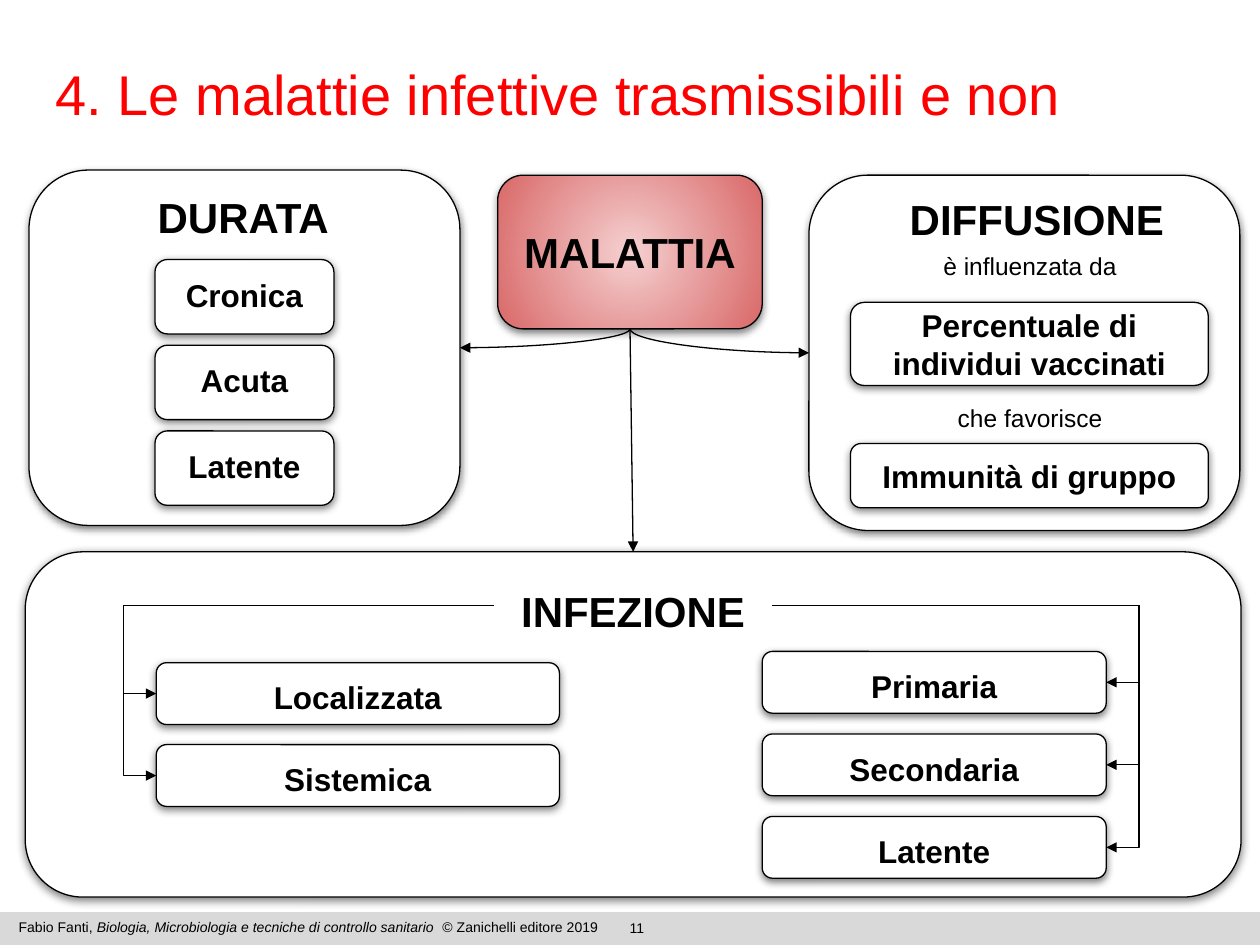
from lxml import etree
from pptx import Presentation
from pptx.dml.color import RGBColor
from pptx.enum.shapes import MSO_CONNECTOR as LINK, MSO_SHAPE as SHAPE
from pptx.enum.text import MSO_ANCHOR as ANCHOR, MSO_AUTO_SIZE as FIT, PP_ALIGN as ALIGN
from pptx.oxml.ns import qn
from pptx.util import Inches, Pt

THEME = {
    "font": "Arial", "ink": "000000", "paper": "FFFFFF", "title": "FF0000", "footer": "D9D9D9",
    "glow": ("F5D0D0", "D96868"), "line": 0.75,
    "size": {"title": 32, "heading": 24, "box": 18, "note": 14, "footer": 8},
}

TITLE = "4. Le malattie infettive trasmissibili e non"
CENTRE = ("MALATTIA", (3.95, 1.39, 2.1, 1.22))
FOOTER = [("Fabio Fanti, ", False),
          ("Biologia, Microbiologia e tecniche di controllo sanitario", True),
          ("  © Zanichelli editore 2019", False)]
PAGE = "11"

PANELS = [
    {"frame": (0.23, 1.35, 3.42, 2.82), "heading": ("DURATA", (0.84, 1.39, 2.18, 0.67)),
     "columns": [{"items": ["Cronica", "Acuta", "Latente"],
                  "first": (1.23, 2.06, 1.42, 0.59), "pitch": 0.68}]},
    {"frame": (6.42, 1.39, 3.42, 2.82), "heading": ("DIFFUSIONE", (6.88, 1.39, 2.7, 1.01)),
     "columns": [{"items": ["Percentuale di individui vaccinati"],
                  "first": (6.75, 2.4, 2.84, 0.66), "anchor": ANCHOR.MIDDLE},
                 {"items": ["Immunità di gruppo"],
                  "first": (6.75, 3.52, 2.84, 0.51), "anchor": ANCHOR.MIDDLE}],
     "notes": [("è influenzata da", (6.78, 1.89, 2.79, 0.38)),
               ("che favorisce", (6.78, 3.1, 2.79, 0.38))]},
    {"frame": (0.2, 4.38, 9.65, 2.74), "heading": ("INFEZIONE", (3.92, 4.52, 2.21, 0.57)),
     "columns": [{"items": ["Localizzata", "Sistemica"],
                  "first": (1.24, 5.26, 3.2, 0.49), "pitch": 0.65, "bus": 0.98},
                 {"items": ["Primaria", "Secondaria", "Latente"],
                  "first": (6.05, 5.17, 2.73, 0.49), "pitch": 0.655, "bus": 9.04}]},
]


def color(name):
    return RGBColor.from_string(THEME.get(name, name))


def inches(values):
    return [Inches(value) for value in values]


def write(shape, runs, role, ink="ink", bold=False, align=ALIGN.CENTER,
          anchor=ANCHOR.TOP, inset=(0.1, 0.1)):
    frame = shape.text_frame
    frame.word_wrap = True
    frame.auto_size = FIT.NONE
    frame.vertical_anchor = anchor
    frame.margin_left = frame.margin_right = Inches(inset[0])
    frame.margin_top = frame.margin_bottom = Inches(inset[1])
    paragraph = frame.paragraphs[0]
    paragraph.alignment = align
    for words, italic in runs:
        run = paragraph.add_run()
        run.text = words
        run.font.name = THEME["font"]
        run.font.size = Pt(THEME["size"][role])
        run.font.bold = bold
        run.font.italic = italic
        run.font.color.rgb = color(ink)


def outline(line, ink="ink"):
    line.color.rgb = color(ink)
    line.width = Pt(THEME["line"])


def add_block(shapes, place, kind=SHAPE.ROUNDED_RECTANGLE, fill="paper", framed=True):
    block = shapes.add_shape(kind, *inches(place))
    block.shadow.inherit = False
    if fill:
        block.fill.solid()
        block.fill.fore_color.rgb = color(fill)
    else:
        block.fill.background()
    if not framed:
        block.line.fill.background()
        return block
    outline(block.line)
    effects = block._element.spPr.find(qn("a:effectLst"))
    shade = etree.SubElement(effects, qn("a:outerShdw"), blurRad=str(Pt(4.5)),
                             dist=str(Pt(1.5)), dir="5400000", rotWithShape="0")
    ink = etree.SubElement(shade, qn("a:srgbClr"), val=THEME["ink"])
    etree.SubElement(ink, qn("a:alpha"), val="50000")
    return block


def add_arrow(shapes, kind, start, end):
    arrow = shapes.add_connector(kind, *inches(start + end))
    outline(arrow.line)
    etree.SubElement(arrow.line._get_or_add_ln(), qn("a:tailEnd"), type="triangle")
    etree.SubElement(arrow._element.spPr, qn("a:effectLst"))
    return arrow


def add_elbow(shapes, start, end, bus):
    arrow = add_arrow(shapes, LINK.ELBOW, start, end)
    bend = round((bus - start[0]) / (end[0] - start[0]) * 100000)
    guides = arrow._element.spPr.find(qn("a:prstGeom")).get_or_add_avLst()
    etree.SubElement(guides, qn("a:gd"), name="adj1", fmla=f"val {bend}")


def add_curve(shapes, start, end):
    (x1, y1), (x2, y2) = start, end
    mid_x, mid_y = (x1 + x2) / 2, (y1 + y2) / 2
    half_w, half_h = (y2 - y1) / 2, abs(x2 - x1) / 2
    leftward = x2 < x1
    reach = half_w if leftward else -half_w
    arrow = add_arrow(shapes, LINK.CURVE, (mid_x - reach, mid_y - half_h),
                      (mid_x + reach, mid_y + half_h))
    properties = arrow._element.spPr
    properties.find(qn("a:prstGeom")).set("prst", "curvedConnector2")
    properties.find(qn("a:xfrm")).set("rot", str((90 if leftward else 270) * 60000))


def add_panel(slide, panel):
    shapes = slide.shapes.add_group_shape().shapes
    frame = add_block(shapes, panel["frame"])
    heading, heading_place = panel["heading"]
    label = add_block(shapes, heading_place, fill=None, framed=False)
    write(label, [(heading, False)], "heading", bold=True)
    head_x, head_y, head_w, head_h = heading_place
    for column in panel["columns"]:
        x, y, w, h = column["first"]
        for row, item in enumerate(column["items"]):
            top = y + row * column.get("pitch", 0)
            box = add_block(shapes, (x, top, w, h))
            write(box, [(item, False)], "box", bold=True,
                  anchor=column.get("anchor", ANCHOR.TOP))
            if "bus" in column:
                on_left = column["bus"] < x
                start = (head_x if on_left else head_x + head_w, head_y + head_h / 2)
                end = (x if on_left else x + w, top + h / 2)
                add_elbow(shapes, start, end, column["bus"])
    for words, place in panel.get("notes", []):
        write(shapes.add_textbox(*inches(place)), [(words, False)], "note")
    return frame


def add_centre(slide):
    words, place = CENTRE
    centre = add_block(slide.shapes, place, SHAPE.FLOWCHART_ALTERNATE_PROCESS)
    centre.fill.gradient()
    for stop, tint, position in zip(centre.fill.gradient_stops, THEME["glow"], (0, 1)):
        stop.color.rgb = color(tint)
        stop.position = position
    gradient = centre._element.spPr.find(qn("a:gradFill"))
    linear = gradient.find(qn("a:lin"))
    radial = etree.Element(qn("a:path"), path="circle")
    etree.SubElement(radial, qn("a:fillToRect"), l="50000", t="50000", r="50000", b="50000")
    gradient.replace(linear, radial)
    write(centre, [(words, False)], "heading", bold=True, anchor=ANCHOR.MIDDLE)
    return centre


def add_footer(slide):
    add_block(slide.shapes, (0, 7.24, 10, 0.26), SHAPE.RECTANGLE, "footer", framed=False)
    number = slide.shapes.add_textbox(*inches((3.94, 7.25, 2.23, 0.17)))
    write(number, [(PAGE, False)], "footer", inset=(0.1, 0.05))
    credit = slide.shapes.add_textbox(*inches((0.05, 7.24, 5.04, 0.24)))
    write(credit, FOOTER, "footer", align=ALIGN.LEFT, inset=(0.1, 0.05))


def main():
    deck = Presentation()
    deck.slide_width, deck.slide_height = inches((10, 7.5))
    slide = deck.slides.add_slide(deck.slide_layouts[5])
    add_footer(slide)
    title = slide.shapes.title
    title.left, title.top, title.width, title.height = inches((0.35, 0.42, 9.65, 0.97))
    outline(title.line, "paper")
    write(title, [(TITLE, False)], "title", "title", align=ALIGN.LEFT, inset=(0.09, 0.05))

    durata, diffusione, infezione = [add_panel(slide, panel) for panel in PANELS]
    centre = add_centre(slide)
    x, y, w, h = CENTRE[1]
    origin = (x + w / 2, y + h)
    stem = add_arrow(slide.shapes, LINK.STRAIGHT, origin, origin)
    stem.begin_connect(centre, 2)
    stem.end_connect(infezione, 0)
    for side, edge in ((durata, durata.left + durata.width), (diffusione, diffusione.left)):
        middle = side.top + side.height / 2
        add_curve(slide.shapes, origin, (edge / Inches(1), middle / Inches(1)))
    deck.save("out.pptx")


if __name__ == "__main__":
    main()
